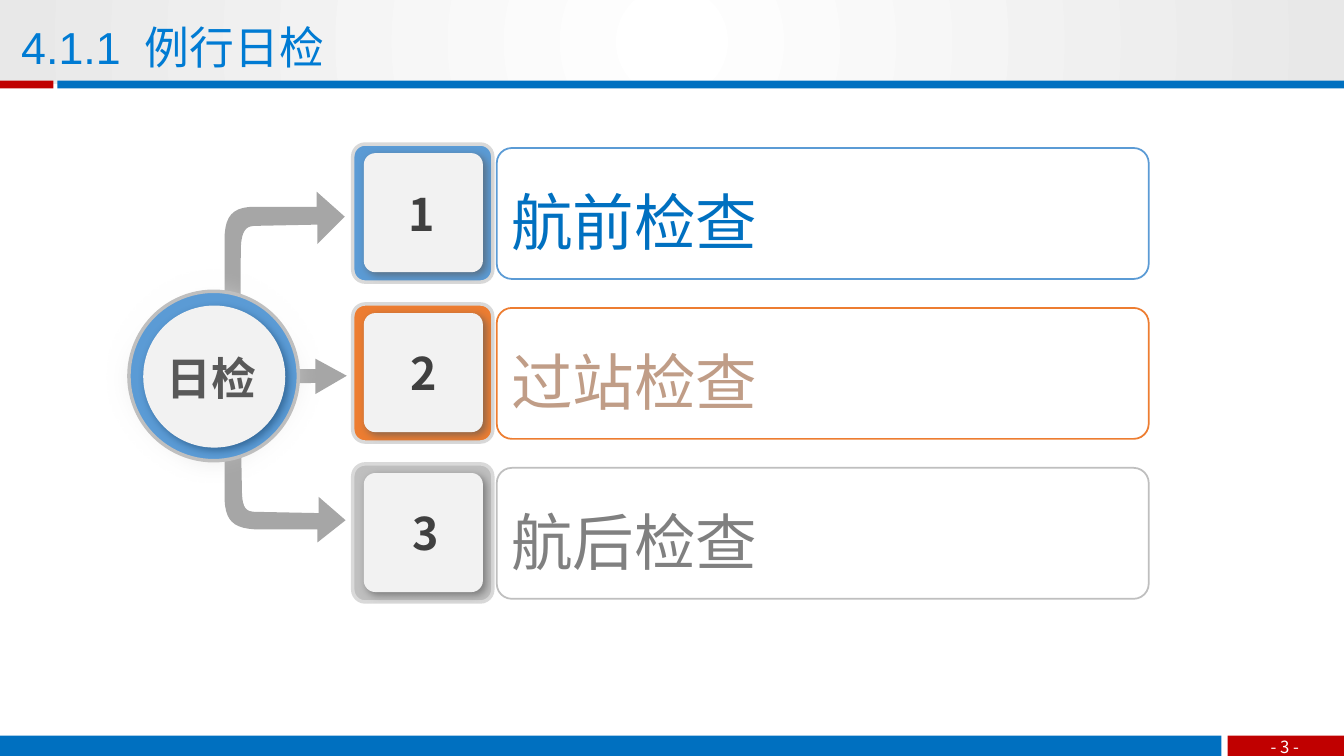
from lxml import etree
from pptx import Presentation
from pptx.dml.color import RGBColor
from pptx.enum.shapes import MSO_SHAPE
from pptx.enum.text import MSO_ANCHOR, MSO_AUTO_SIZE, PP_ALIGN
from pptx.oxml.ns import qn
from pptx.util import Cm, Pt

RECTANGLE, ROUNDED, OVAL = MSO_SHAPE.RECTANGLE, MSO_SHAPE.ROUNDED_RECTANGLE, MSO_SHAPE.OVAL
MIDDLE, TOP = MSO_ANCHOR.MIDDLE, MSO_ANCHOR.TOP
LEFT, CENTER = PP_ALIGN.LEFT, PP_ALIGN.CENTER
NO_AUTOFIT = MSO_AUTO_SIZE.NONE

WHITE = RGBColor(0xFF, 0xFF, 0xFF)
PALE = RGBColor(0xF2, 0xF2, 0xF2)
MIST = RGBColor(0xE8, 0xE8, 0xE8)
EDGE = RGBColor(0xD9, 0xD9, 0xD9)
SILVER = RGBColor(0xBF, 0xBF, 0xBF)
ARROW_GRAY = RGBColor(0xA6, 0xA6, 0xA6)
MID_GRAY = RGBColor(0x80, 0x80, 0x80)
DARK_GRAY = RGBColor(0x59, 0x59, 0x59)
CHARCOAL = RGBColor(0x40, 0x40, 0x40)
NAVY = RGBColor(0x1F, 0x4E, 0x79)
BLUE = RGBColor(0x00, 0x70, 0xC0)
TITLE_BLUE = RGBColor(0x00, 0x7B, 0xD3)
SKY = RGBColor(0x5B, 0x9B, 0xD5)
ORANGE = RGBColor(0xED, 0x7D, 0x31)
TAN = RGBColor(0xC0, 0x9D, 0x87)
RED = RGBColor(0xC0, 0x00, 0x00)

SANS, LATIN, CARD_FONT = "Noto Sans CJK SC", "Arial", "Calibri"
CURVE_STEPS = 10
ROW_PITCH = 4.03

ROWS = [
    ("航前检查", SKY, BLUE),
    ("过站检查", ORANGE, TAN),
    ("航后检查", SILVER, MID_GRAY),
]

ARROWS = [
    [(6.05, 9.93), (6.1, 12.45), (6.12, 12.9, 6.27, 12.9, 6.53, 12.9),
     (8.03, 12.93), (8.03, 12.52), (8.71, 13.11), (8, 13.67), (8, 13.34), (6.43, 13.34),
     (5.87, 13.31, 5.69, 13.11, 5.66, 12.6), (5.66, 9.88),
     (5.74, 9.42, 5.97, 9.47, 6.05, 9.93)],
    [(5.13, 9.7), (7.95, 9.65), (7.95, 9.93), (8.74, 9.47), (7.95, 9.04), (7.95, 9.3),
     (5.13, 9.3)],
    [(6.05, 9.14), (6.07, 6.22), (6.1, 5.72, 6.25, 5.69, 6.5, 5.69),
     (8, 5.66), (8, 6.15), (8.69, 5.46), (7.98, 4.83), (7.98, 5.21), (6.43, 5.21),
     (5.84, 5.21, 5.66, 5.46, 5.66, 6.05), (5.66, 9.19),
     (5.72, 9.7, 5.97, 9.68, 6.05, 9.14)],
]


class InspectionPage:
    """Draws styled elements on one slide, with lengths in centimetres."""

    def __init__(self, deck):
        self.page = deck.slides.add_slide(deck.slide_layouts[5])

    def shape(self, kind, left, top, width, height, fill=None, line=None, weight=2.5, corner=None):
        box = self.page.shapes.add_shape(kind, Cm(left), Cm(top), Cm(width), Cm(height))
        if corner is not None:
            box.adjustments[0] = corner
        return self.paint(box, fill, line, weight)

    def paint(self, box, fill, line=None, weight=2.5):
        box.shadow.inherit = False
        if fill is None:
            box.fill.background()
        else:
            box.fill.solid()
            box.fill.fore_color.rgb = fill
        if line is None:
            box.line.fill.background()
        else:
            box.line.color.rgb = line
            box.line.width = Pt(weight)
        return box

    def gradient(self, box, start, end, radial=False):
        box.fill.gradient()
        for stop, color in zip(box.fill.gradient_stops, (start, end)):
            stop.color.rgb = color
        box.fill.gradient_angle = 270
        if radial:
            gradient = box._element.spPr.find(qn("a:gradFill"))
            gradient.remove(gradient.find(qn("a:lin")))
            circle = etree.SubElement(gradient, qn("a:path"), {"path": "circle"})
            etree.SubElement(circle, qn("a:fillToRect"), dict.fromkeys("ltrb", "50000"))

    def effect(self, box, name, **settings):
        effects = box._element.spPr.find(qn("a:effectLst"))
        return etree.SubElement(effects, qn(name), settings)

    def drop_shadow(self, box, color):
        shadow = self.effect(box, "a:outerShdw", blurRad=str(Pt(6)), dist=str(Pt(3)),
                             dir="2700000", algn="tl", rotWithShape="0")
        tint = etree.SubElement(shadow, qn("a:srgbClr"), val=str(color))
        etree.SubElement(tint, qn("a:alpha"), val="64000")

    def arrow(self, steps):
        x, y = steps[0]
        points = []
        for step in steps[1:]:
            if len(step) == 2:
                points.append(step)
            else:
                x1, y1, x2, y2, x3, y3 = step
                for count in range(1, CURVE_STEPS + 1):
                    t = count / CURVE_STEPS
                    a, b, c, d = (1 - t) ** 3, 3 * t * (1 - t) ** 2, 3 * t * t * (1 - t), t ** 3
                    points.append((a * x + b * x1 + c * x2 + d * x3,
                                   a * y + b * y1 + c * y2 + d * y3))
            x, y = step[-2:]
        start_x, start_y = steps[0]
        builder = self.page.shapes.build_freeform(Cm(start_x), Cm(start_y))
        builder.add_line_segments([(Cm(px), Cm(py)) for px, py in points], close=True)
        self.paint(builder.convert_to_shape(), ARROW_GRAY)

    def set_text(self, box, text, size, font, color, bold=False, align=CENTER, anchor=MIDDLE,
                 wrap=True, spacing=None, tab=None):
        frame = box.text_frame
        frame.word_wrap = wrap
        frame.auto_size = NO_AUTOFIT
        frame.vertical_anchor = anchor
        frame.text = text
        para = frame.paragraphs[0]
        para.alignment = align
        if spacing is not None:
            para.line_spacing = spacing
        if tab is not None:
            tabs = etree.SubElement(para._p.get_or_add_pPr(), qn("a:tabLst"))
            etree.SubElement(tabs, qn("a:tab"), pos=str(Cm(tab)), algn="l")
        para.font.size = Pt(size)
        para.font.name = font
        para.font.bold = bold
        para.font.color.rgb = color

    def label(self, left, top, width, height, *style, **options):
        box = self.page.shapes.add_textbox(Cm(left), Cm(top), Cm(width), Cm(height))
        self.set_text(box, *style, **options)

    def title(self, text):
        box = self.page.shapes.title
        box.left, box.top, box.width, box.height = Cm(0.28), Cm(0.36), Cm(17.48), Cm(1.63)
        self.set_text(box, text, 32, LATIN, TITLE_BLUE, align=LEFT, anchor=TOP, tab=3.12)
        self.page.shapes._spTree.append(box._element)

    def frame(self):
        header = self.shape(RECTANGLE, 0, 0, 33.87, 2.11, WHITE)
        self.gradient(header, WHITE, MIST, radial=True)
        self.shape(RECTANGLE, 1.45, 2.03, 32.42, 0.2, BLUE)
        self.shape(RECTANGLE, 0, 2.03, 1.35, 0.2, RED)
        self.shape(RECTANGLE, 0, 18.54, 30.78, 0.51, BLUE)
        self.shape(RECTANGLE, 30.94, 18.54, 2.93, 0.51, RED)
        self.label(31.39, 18.44, 1.98, 0.76, "- 3 -", 12, SANS, WHITE, wrap=False)

    def hub(self, text):
        halo = self.shape(OVAL, 2.44, 6.53, 5.89, 5.89, WHITE)
        self.gradient(halo, WHITE, SILVER)
        self.effect(halo, "a:softEdge", rad=str(Pt(25)))
        self.shape(OVAL, 3.25, 7.34, 4.27, 4.27, SKY, SILVER)
        self.drop_shadow(self.shape(OVAL, 3.61, 7.7, 3.58, 3.58, PALE), NAVY)
        self.label(3.58, 8.71, 3.51, 1.63, text, 32, LATIN, DARK_GRAY, bold=True, anchor=TOP)

    def row(self, index, text, accent, color):
        drop = index * ROW_PITCH
        card = self.shape(ROUNDED, 12.52, 3.73 + drop, 16.43, 3.3, None, accent, 1.25, 0.115)
        self.set_text(card, text, 44, CARD_FONT, color, align=LEFT, spacing=1.2)
        self.shape(ROUNDED, 8.89, 3.63 + drop, 3.53, 3.48, accent, EDGE, corner=0.09)
        tile = self.shape(ROUNDED, 9.17, 3.86 + drop, 3, 3, PALE, corner=0.096)
        self.drop_shadow(tile, DARK_GRAY)
        self.label(9.22 + 0.05 * index, 5.05 + drop, 2.84, 0.64, str(index + 1), 32, SANS,
                   CHARCOAL, bold=True)


def main():
    deck = Presentation()
    deck.slide_width, deck.slide_height = Cm(33.87), Cm(19.05)
    page = InspectionPage(deck)
    page.frame()
    for steps in ARROWS:
        page.arrow(steps)
    page.hub("日检")
    for index, row in enumerate(ROWS):
        page.row(index, *row)
    page.title("4.1.1\t例行日检")
    deck.save("out.pptx")


if __name__ == "__main__":
    main()
